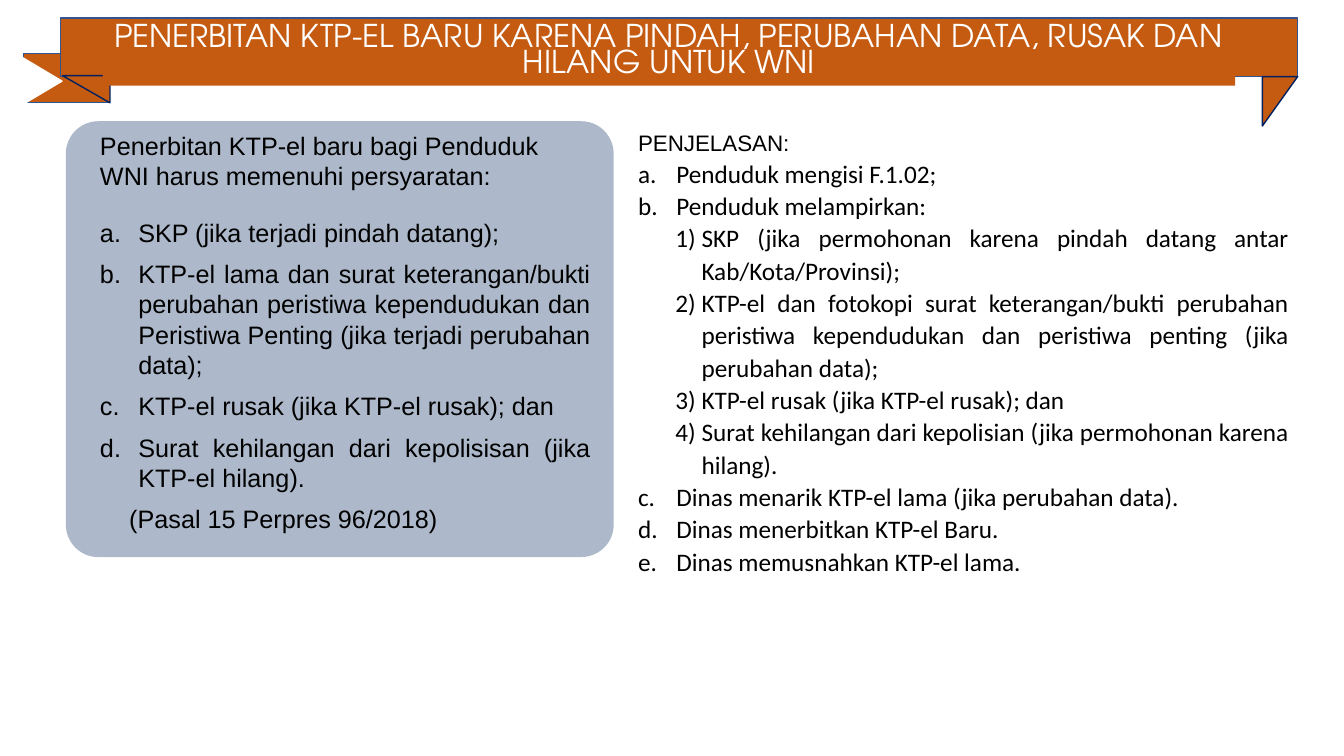
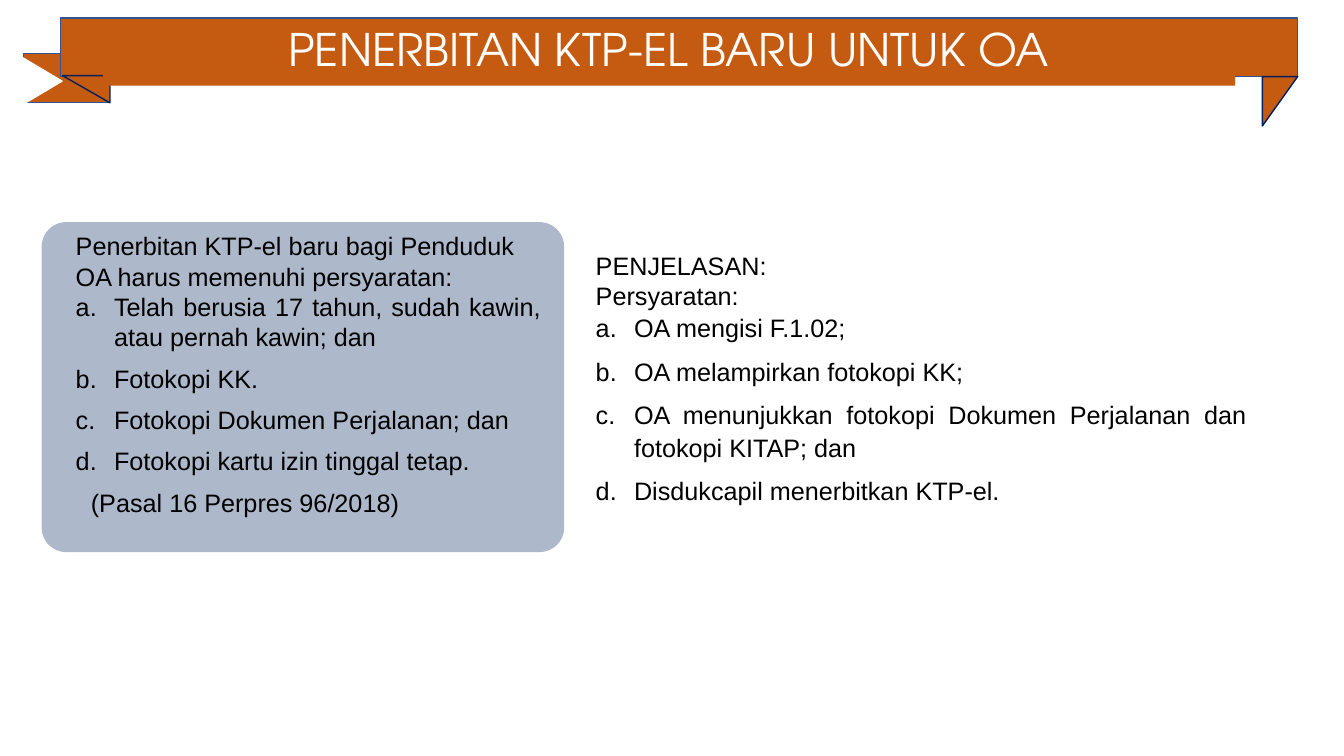
from pptx import Presentation
from pptx.dml.color import RGBColor
from pptx.enum.shapes import MSO_SHAPE as Shape
from pptx.enum.text import MSO_ANCHOR as Anchor, PP_ALIGN as Align
from pptx.oxml.xmlchemy import OxmlElement as Node
from pptx.util import Inches, Pt

WIDE, HIGH = Inches(13.33), Inches(7.5)
ORANGE, GREY, WHITE, BLACK = "C55A11", "ADB9CA", "FFFFFF", "000000"
NAVY, BLUE, STEEL = "002060", "2F5597", "325491"
SANS, BODY, TITLE = "Arial", "Calibri", "TeX Gyre Adventor"

# Boxes are left, top, width, height in percent of the slide.
RIBBON = [
    (Shape.RECTANGLE, (1.73, 7.07, 6.38, 6.53), BLUE, 0),
    (Shape.RECTANGLE, (4.5, 2.4, 92.05, 7.73), STEEL, 0),
    (Shape.RIGHT_TRIANGLE, (93.4, 11.07, 3.68, 4.67), NAVY, 90),
    (Shape.RIGHT_TRIANGLE, (4.65, 10, 3.53, 3.6), NAVY, 180),
]
BANNER = (7.65, 2.53, 84.25, 8.8)
NOTCH = (0.75, 7.6, 4.2, 6.27)


def color(code):
    return RGBColor.from_string(code)


def place(box):
    left, top, width, height = box
    return [round(share * side / 100) for share, side in
            ((left, WIDE), (top, HIGH), (width, WIDE), (height, HIGH))]


def add_form(slide, kind, box, fill, line=None, turn=0):
    form = slide.shapes.add_shape(kind, *place(box))
    form.shadow.inherit = False
    form.rotation = turn
    form.fill.solid()
    form.fill.fore_color.rgb = color(fill)
    if line:
        form.line.color.rgb = color(line)
        form.line.width = Pt(1)
    else:
        form.line.fill.background()
    return form


def add_run(para, text, size, font, ink=BLACK):
    run = para.add_run()
    run.text = text
    run.font.size = Pt(size)
    run.font.name = font
    run.font.color.rgb = color(ink)


def set_mark(para, mark, start, left, hang):
    """Number a paragraph automatically, with a hanging indent."""
    props = para._p.get_or_add_pPr()
    props.set("marL", str(Inches(left)))
    props.set("indent", str(-Inches(hang)))
    if mark:
        node = Node("a:buAutoNum")
        node.set("type", mark)
        if start > 1:
            node.set("startAt", str(start))
        props.append(node)


def plain(text, size=18, after=0):
    return dict(text=text, size=size, after=after, align=Align.LEFT)


def item(text, font=SANS, after=8, space=1, start=1):
    return dict(text=text, font=font, after=after, space=space,
                start=start, mark="alphaLcPeriod", left=0.38, hang=0.38)


def step(text):
    return dict(text=text, font=BODY, space=1.07,
                mark="arabicParenR", left=0.63, hang=0.26)


def cite(text, left):
    return dict(text=text, after=8, left=left)


def add_para(para, text, size=18, font=SANS, after=0, space=1, start=1,
             mark=None, left=0, hang=0, align=Align.JUSTIFY):
    para.alignment = align
    para.line_spacing = space
    para.space_after = Pt(after)
    set_mark(para, mark, start, left, hang)
    add_run(para, text, size, font)


def add_text(slide, box, rows):
    frame = slide.shapes.add_textbox(*place(box)).text_frame
    frame.word_wrap = True
    for i, row in enumerate(rows):
        add_para(frame.add_paragraph() if i else frame.paragraphs[0], **row)


def add_panel(slide, box, rows):
    """Grey rounded panel with its text set inside the edges."""
    form = add_form(slide, Shape.ROUNDED_RECTANGLE, box, GREY, GREY)
    form.adjustments[0] = 0.073
    left, top, width, height = box
    add_text(slide, (left + 1.75, top + 0.4, width - 2.7, height), rows)


def add_title(slide, text, size, space):
    for kind, box, line, turn in RIBBON:
        add_form(slide, kind, box, ORANGE, line, turn)
    frame = add_form(slide, Shape.RECTANGLE, BANNER, ORANGE).text_frame
    frame.word_wrap = True
    frame.vertical_anchor = Anchor.MIDDLE
    para = frame.paragraphs[0]
    para.alignment = Align.CENTER
    para.line_spacing = space
    add_run(para, text, size, TITLE, WHITE)
    add_form(slide, Shape.ISOSCELES_TRIANGLE, NOTCH, WHITE, WHITE, 90)


def add_page(deck, title, notes, panel):
    slide = deck.slides.add_slide(deck.slide_layouts[6])
    add_title(slide, *title)
    add_text(slide, *notes)
    add_panel(slide, *panel)


def add_wni(deck):
    def note(text, after=0, start=1):
        return item(text, BODY, after, 1.07, start)

    notes = [
        plain("PENJELASAN:", 16),
        note("Penduduk mengisi F.1.02;"),
        note("Penduduk melampirkan:"),
        step("SKP (jika permohonan karena pindah datang antar "
             "Kab/Kota/Provinsi);"),
        step("KTP-el dan fotokopi surat keterangan/bukti perubahan peristiwa "
             "kependudukan dan peristiwa penting (jika perubahan data);"),
        step("KTP-el rusak (jika KTP-el rusak); dan"),
        step("Surat kehilangan dari kepolisian "
             "(jika permohonan karena hilang)."),
        note("Dinas menarik KTP-el lama (jika perubahan data).", start=3),
        note("Dinas menerbitkan KTP-el Baru.", start=3),
        note("Dinas memusnahkan KTP-el lama.", 8, 3),
    ]
    terms = [
        plain("Penerbitan KTP-el baru bagi Penduduk WNI harus memenuhi "
              "persyaratan:", after=19),
        item("SKP (jika terjadi pindah datang);"),
        item("KTP-el lama dan surat keterangan/bukti perubahan peristiwa "
             "kependudukan dan Peristiwa Penting "
             "(jika terjadi perubahan data);"),
        item("KTP-el rusak (jika KTP-el rusak); dan"),
        item("Surat kehilangan dari kepolisisan (jika KTP-el hilang)."),
        cite("(Pasal 15 Perpres 96/2018)", 0.29),
    ]
    add_page(deck,
             ("PENERBITAN KTP-EL BARU KARENA PINDAH, PERUBAHAN DATA, "
              "RUSAK DAN HILANG UNTUK WNI", 22.4, 0.7),
             ((46.74, 16.4, 49.89, 60.93), notes),
             ((4.95, 16.13, 40.66, 57.47), terms))


def add_oa(deck):
    def note(text):
        return item(text, space=1.07)

    notes = [
        plain("PENJELASAN:"),
        plain("Persyaratan:"),
        note("OA mengisi F.1.02;"),
        note("OA melampirkan fotokopi KK;"),
        note("OA menunjukkan fotokopi Dokumen Perjalanan dan "
             "fotokopi KITAP; dan"),
        note("Disdukcapil menerbitkan KTP-el."),
    ]
    terms = [
        plain("Penerbitan KTP-el baru bagi Penduduk OA harus memenuhi "
              "persyaratan:"),
        item("Telah berusia 17 tahun, sudah kawin, atau pernah kawin; dan"),
        item("Fotokopi KK."),
        item("Fotokopi Dokumen Perjalanan; dan"),
        item("Fotokopi kartu izin tinggal tetap."),
        cite("(Pasal 16 Perpres 96/2018)", 0.15),
    ]
    add_page(deck,
             ("PENERBITAN KTP-EL BARU UNTUK OA", 32, 0.9),
             ((43.59, 32.4, 49.89, 35.33), notes),
             ((3.15, 29.47, 38.78, 43.47), terms))


def main():
    deck = Presentation()
    deck.slide_width, deck.slide_height = WIDE, HIGH
    add_wni(deck)
    add_oa(deck)
    deck.save("out.pptx")


if __name__ == "__main__":
    main()
